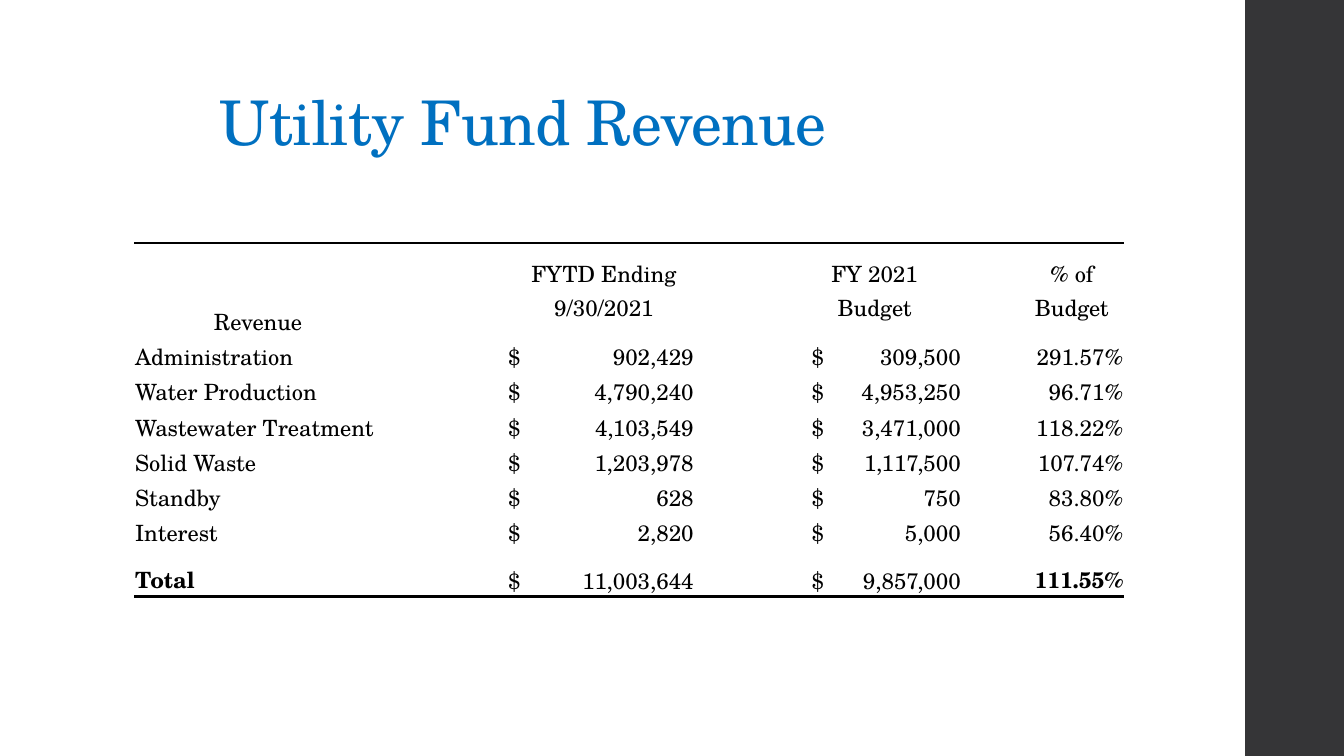
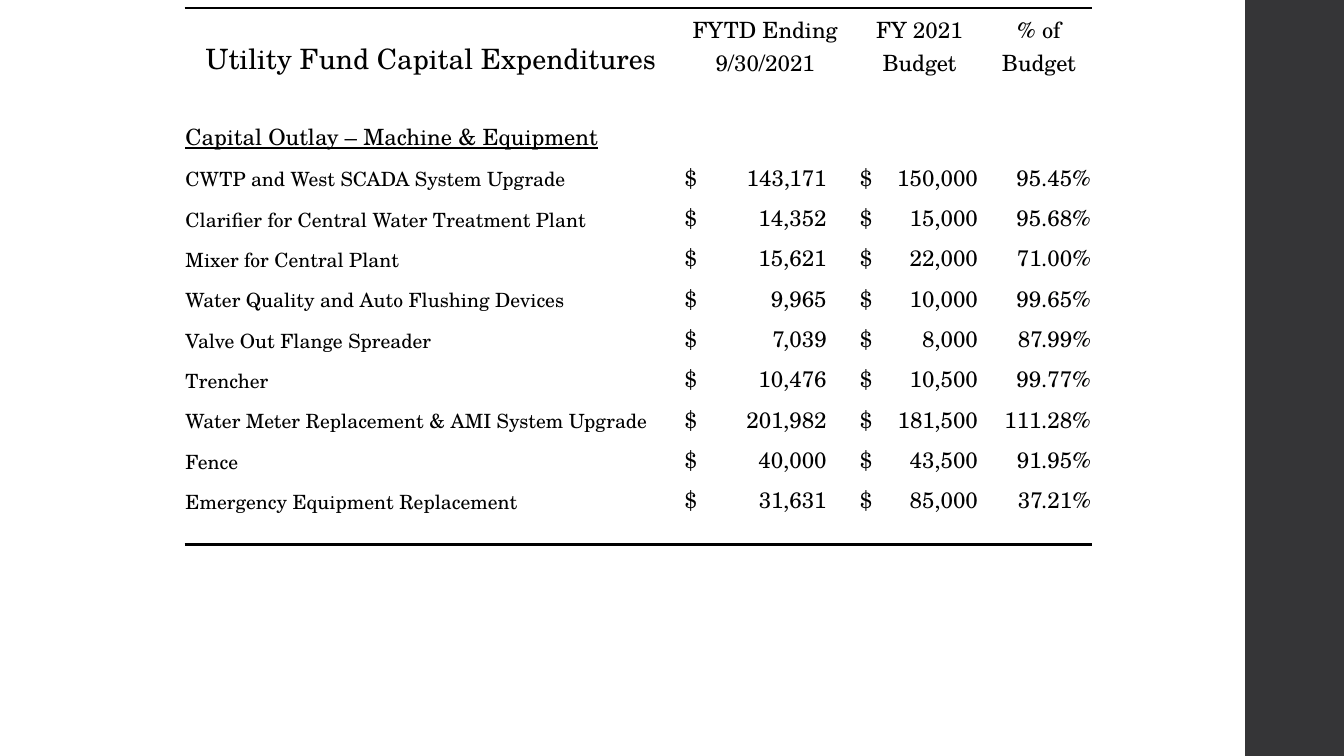
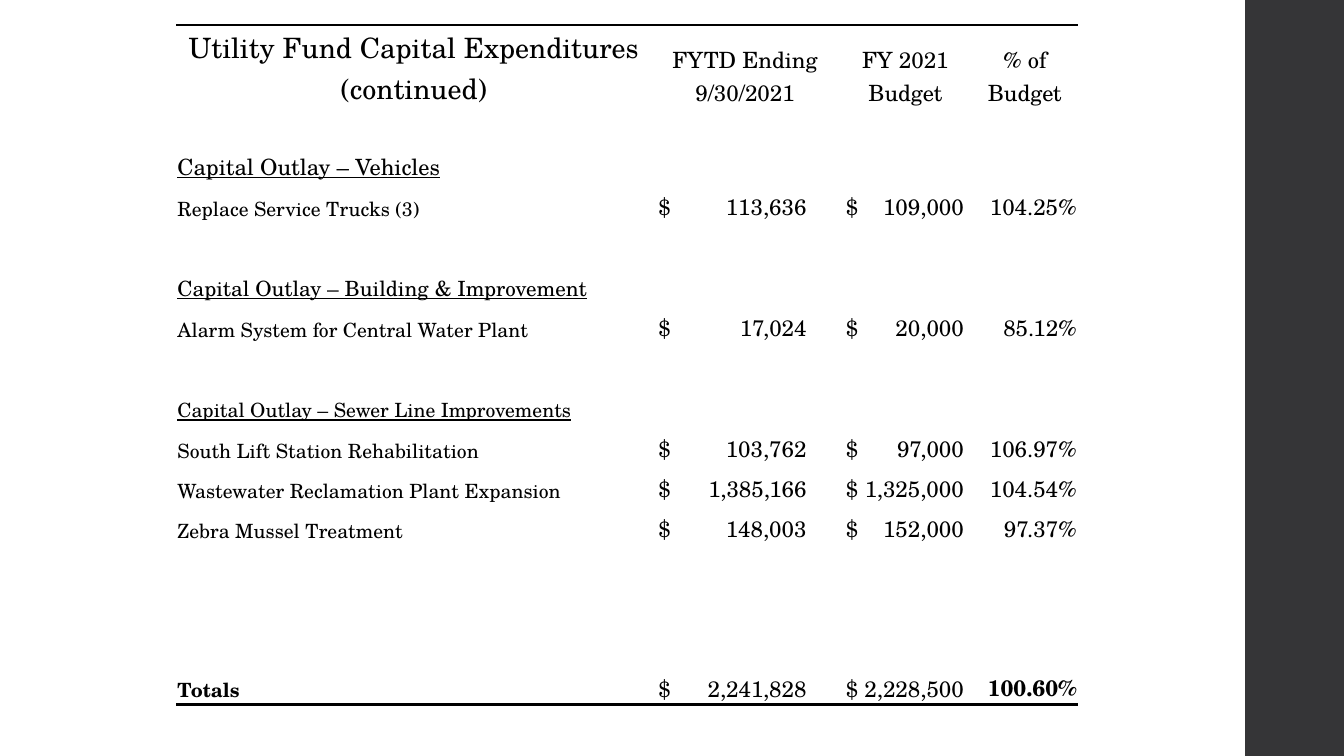
from dataclasses import dataclass
from typing import Optional

from lxml import etree
from pptx import Presentation
from pptx import util as u
from pptx.dml.color import RGBColor
from pptx.enum import shapes, text
from pptx.oxml import ns

FONT = "TeX Gyre Schola"
BLACK, WHITE, BLUE, CHARCOAL = "000000", "FFFFFF", "0070C0", "353537"
PLAIN_TABLE_STYLE = "{2D5ABB26-0587-4C30-8999-92F81FD0307C}"  # no style, no grid
INSET = 0.01
RULE_WIDTH = 2
BODY_SIZE, ITEM_SIZE, HEADING_SIZE = 16, 14, 20
LEFT, CENTER, RIGHT = text.PP_ALIGN.LEFT, text.PP_ALIGN.CENTER, text.PP_ALIGN.RIGHT
TOP, BOTTOM = text.MSO_ANCHOR.TOP, text.MSO_ANCHOR.BOTTOM


@dataclass(frozen=True)
class Column:
    width: float
    header_indent: float = INSET
    dollar_indent: float = INSET
    amount_tab: float = 0  # right tab for the amount, from the dollar sign


@dataclass(frozen=True)
class Row:
    height: float
    cells: tuple[str, ...] = ("", "", "", "")
    label_size: int = BODY_SIZE
    header: bool = False
    section: bool = False
    total: bool = False
    figures_on_top: bool = False


@dataclass(frozen=True)
class Sheet:
    left: float
    top: float
    columns: tuple[Column, ...]
    rows: tuple[Row, ...]
    title: Optional[str] = None


# Row builders
def header(height: float, label: str, *heads: str, size: int = HEADING_SIZE,
           on_top: bool = False) -> Row:
    return Row(height, (label, *heads), size, header=True, figures_on_top=on_top)


def section(label: str, size: int = BODY_SIZE) -> Row:
    return Row(0.4, (label, "", "", ""), size, section=True)


def item(label: str, actual: str, budget: str, share: str, height: float = 0.4,
         size: int = ITEM_SIZE, total: bool = False) -> Row:
    return Row(height, (label, f"$\t{actual}", f"$\t{budget}", share), size, total=total)


def revenue(*cells: str) -> Row:
    return item(*cells, height=0.35, size=BODY_SIZE)


# Content
HEADS = ("FYTD Ending 9/30/2021", "FY 2021 Budget", "% of Budget")
GAP = Row(0.4)

SHEETS = (
    Sheet(
        1.33, 2.41,
        (Column(2.46), Column(3.16, 1.25, 1.25, 1.84),
         Column(2.65, 0.81, 1.1, 1.48), Column(1.55, 0.52)),
        (
            header(0.47, "", "FYTD Ending", "FY 2021", "% of"),
            header(0.47, "Revenue", "9/30/2021", "Budget", "Budget",
                   size=BODY_SIZE, on_top=True),
            revenue("Administration", "902,429", "309,500", "291.57%"),
            revenue("Water Production", "4,790,240", "4,953,250", "96.71%"),
            revenue("Wastewater Treatment", "4,103,549", "3,471,000", "118.22%"),
            revenue("Solid Waste", "1,203,978", "1,117,500", "107.74%"),
            revenue("Standby", "628", "750", "83.80%"),
            revenue("Interest", "2,820", "5,000", "56.40%"),
            item("Total", "11,003,644", "9,857,000", "111.55%", 0.47, BODY_SIZE, True),
        ),
        "Utility Fund Revenue",
    ),
    Sheet(
        1.83, 0.08,
        (Column(4.89), Column(1.74, INSET, 0.07, 1.41),
         Column(1.32, INSET, 0.07, 1.17), Column(1.05)),
        (
            header(0.7, "Utility Fund Capital Expenditures", *HEADS),
            Row(0.34),
            section("Capital Outlay – Machine & Equipment"),
            item("CWTP and West SCADA System Upgrade", "143,171", "150,000", "95.45%"),
            item("Clarifier for Central Water Treatment Plant", "14,352", "15,000", "95.68%"),
            item("Mixer for Central Plant", "15,621", "22,000", "71.00%"),
            item("Water Quality and Auto Flushing Devices", "9,965", "10,000", "99.65%"),
            item("Valve Out Flange Spreader", "7,039", "8,000", "87.99%"),
            item("Trencher", "10,476", "10,500", "99.77%"),
            item("Water Meter Replacement & AMI System Upgrade",
                 "201,982", "181,500", "111.28%"),
            item("Fence", "40,000", "43,500", "91.95%"),
            item("Emergency Equipment Replacement", "31,631", "85,000", "37.21%"),
            Row(0.28),
        ),
    ),
    Sheet(
        1.75, 0.25,
        (Column(4.71), Column(1.86, INSET, 0.07, 1.47),
         Column(1.32, INSET, 0.07, 1.17), Column(1.05)),
        (
            header(0.83, "Utility Fund Capital Expenditures (continued)", *HEADS),
            Row(0.33),
            section("Capital Outlay – Vehicles"),
            item("Replace Service Trucks (3)", "113,636", "109,000", "104.25%"),
            GAP,
            section("Capital Outlay – Building & Improvement", 15),
            item("Alarm System for Central Water Plant", "17,024", "20,000", "85.12%"),
            GAP,
            section("Capital Outlay – Sewer Line Improvements", 14),
            item("South Lift Station Rehabilitation", "103,762", "97,000", "106.97%"),
            item("Wastewater Reclamation Plant Expansion",
                 "1,385,166", "1,325,000", "104.54%"),
            item("Zebra Mussel Treatment", "148,003", "152,000", "97.37%"),
            GAP,
            Row(0.28),
            GAP,
            item("Totals", "2,241,828", "2,228,500", "100.60%", 0.5, total=True),
        ),
    ),
)


# Drawing helpers
def color(value: str) -> RGBColor:
    return RGBColor.from_string(value)


def set_font(para, size: float, ink: str = BLACK) -> None:
    para.font.name = FONT
    para.font.size = u.Pt(size)
    para.font.color.rgb = color(ink)


def add_right_tab(para, position: float) -> None:
    tabs = etree.SubElement(para._p.get_or_add_pPr(), ns.qn("a:tabLst"))
    etree.SubElement(tabs, ns.qn("a:tab"), pos=str(u.Inches(position)), algn="r")


def add_rule(cell, side: str) -> None:
    """Draw a black rule on one side of a cell: lnT or lnB."""
    line = etree.Element(ns.qn(f"a:{side}"), w=str(u.Pt(RULE_WIDTH)))
    fill = etree.SubElement(line, ns.qn("a:solidFill"))
    etree.SubElement(fill, ns.qn("a:srgbClr"), val=BLACK)
    cell._tc.get_or_add_tcPr().insert(0, line)


def add_band(page) -> None:
    band = page.shapes.add_shape(shapes.MSO_SHAPE.RECTANGLE, u.Inches(12.35), 0,
                                 u.Inches(1), u.Inches(7.5))
    band.shadow.inherit = False
    band.fill.solid()
    band.fill.fore_color.rgb = color(CHARCOAL)
    band.line.fill.background()


def add_title(page, words: str) -> None:
    box = page.shapes.add_textbox(u.Inches(2.08), u.Inches(0.17),
                                  u.Inches(7.95), u.Inches(1.45))
    frame = box.text_frame
    frame.word_wrap = True
    frame.vertical_anchor = BOTTOM
    para = frame.paragraphs[0]
    para.line_spacing = 0.9
    span = para.add_run()
    span.text = words
    span._r.get_or_add_rPr().set("spc", "-50")
    set_font(para, 44, BLUE)


def fill_cell(cell, row: Row, column: Column, index: int) -> None:
    is_label, is_share = index == 0, index == 3
    words = row.cells[index]
    cell.fill.solid()
    cell.fill.fore_color.rgb = color(WHITE)
    cell.margin_left = cell.margin_right = cell.margin_top = u.Inches(INSET)
    cell.margin_bottom = 0
    cell.vertical_anchor = TOP if row.figures_on_top and not is_label else BOTTOM

    para = cell.text_frame.paragraphs[0]
    if not words:
        para._p.get_or_add_endParaRPr().set("sz", "800")
        return
    para.add_run().text = words
    if row.header:
        para.alignment = CENTER
        cell.margin_left = u.Inches(column.header_indent)
    elif is_share:
        para.alignment = RIGHT
    else:
        para.alignment = LEFT
        if column.amount_tab:
            cell.margin_left = u.Inches(column.dollar_indent)
            add_right_tab(para, column.amount_tab)
    set_font(para, row.label_size if is_label else BODY_SIZE)
    para.font.bold = row.total and (is_label or is_share)
    para.font.underline = row.section


def add_sheet_table(page, sheet: Sheet) -> None:
    width = sum(column.width for column in sheet.columns)
    height = sum(row.height for row in sheet.rows)
    table = page.shapes.add_table(
        len(sheet.rows), len(sheet.columns), u.Inches(sheet.left),
        u.Inches(sheet.top), u.Inches(width), u.Inches(height)).table
    table.first_row = table.horz_banding = False
    table._tbl.tblPr.find(ns.qn("a:tableStyleId")).text = PLAIN_TABLE_STYLE
    for index, column in enumerate(sheet.columns):
        table.columns[index].width = u.Inches(column.width)
    for number, row in enumerate(sheet.rows):
        table.rows[number].height = u.Inches(row.height)
        for index, column in enumerate(sheet.columns):
            fill_cell(table.cell(number, index), row, column, index)
    # Rules above the first row and below the last
    for index in range(len(sheet.columns)):
        add_rule(table.cell(0, index), "lnT")
        add_rule(table.cell(len(sheet.rows) - 1, index), "lnB")


def main() -> None:
    deck = Presentation()
    deck.slide_width, deck.slide_height = u.Inches(13.33), u.Inches(7.5)
    for sheet in SHEETS:
        page = deck.slides.add_slide(deck.slide_layouts[6])
        add_band(page)
        if sheet.title:
            add_title(page, sheet.title)
        add_sheet_table(page, sheet)
    deck.save("out.pptx")


if __name__ == "__main__":
    main()
